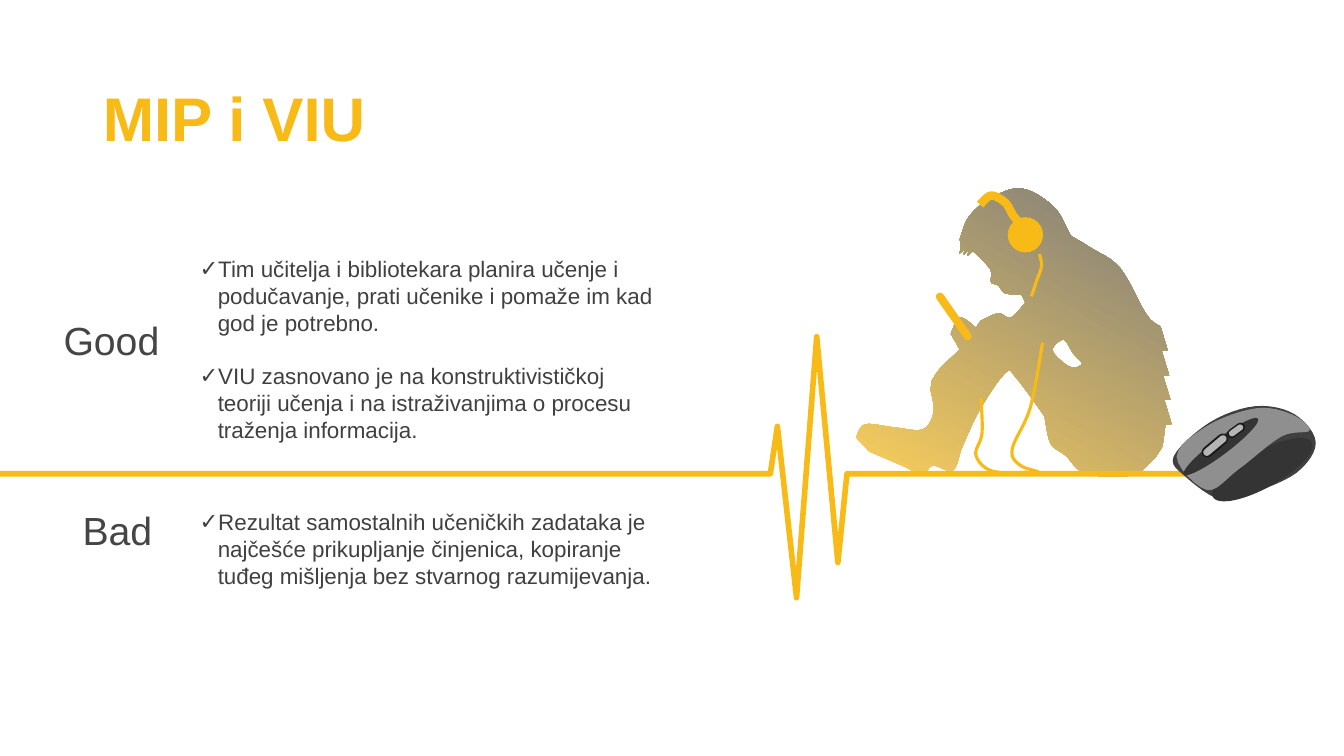
from dataclasses import dataclass
from math import hypot

from lxml.etree import SubElement
from pptx import Presentation
from pptx.dml.color import RGBColor
from pptx.enum.shapes import MSO_SHAPE
from pptx.enum.text import MSO_ANCHOR, MSO_AUTO_SIZE, PP_ALIGN
from pptx.oxml.ns import qn
from pptx.util import Pt

PX = 9144


@dataclass(frozen=True)
class Theme:
    """Colours, font, type sizes and line widths of the slide."""
    accent: str = "F8BA16"
    label: str = "454545"
    body: str = "404040"
    shell: str = "404040"
    side: str = "343434"
    top: str = "8F8F8F"
    slot: str = "1A1A1A"
    wheel: str = "B5B5B5"
    font: str = "Arial"
    title_size: int = 44
    label_size: int = 28
    body_size: int = 16
    pulse_width: float = 4
    cord_width: float = 2.25
    band_width: float = 6


THEME = Theme()


def paint(shape, fill=None, line=None, width=1):
    """Give a shape a plain fill, a plain line, or neither, and no shadow."""
    shape.shadow.inherit = False
    if fill:
        shape.fill.solid()
        shape.fill.fore_color.rgb = RGBColor.from_string(fill)
    else:
        shape.fill.background()
    if line:
        shape.line.color.rgb = RGBColor.from_string(line)
        shape.line.width = Pt(width)
    else:
        shape.line.fill.background()


def smooth(points, closed=False, steps=6):
    """Return a Catmull-Rom curve through a few anchor points."""
    if closed:
        padded = [points[-1], *points, *points[:2]]
    else:
        padded = [points[0], *points, points[-1]]

    def blend(a, b, c, d, t):
        return (2 * b + (c - a) * t + (2 * a - 5 * b + 4 * c - d) * t ** 2
                + (3 * b - a - 3 * c + d) * t ** 3) / 2

    curve = [tuple(blend(*axis, step / steps) for axis in zip(*padded[i:i + 4]))
             for i in range(len(padded) - 3) for step in range(steps)]
    return curve + [padded[-2]]


def hair_tips(start, end, count, depth):
    """Return a row of pointed locks from start to end, standing out by depth."""
    run, rise = end[0] - start[0], end[1] - start[1]
    length = hypot(run, rise)
    tips = [start]
    for lock in range(1, count + 1):
        along = lock / count
        x, y = start[0] + run * along, start[1] + rise * along
        tips += [(x + rise / length * depth, y - run / length * depth), (x, y)]
    return tips


def draw_outline(slide, box, *contours, closed=True, **style):
    """Draw contours, given in px from the corner of a box, as one outline."""
    placed = [[((box[0] + x) * PX, (box[1] + y) * PX) for x, y in contour] for contour in contours]
    builder = slide.shapes.build_freeform(*placed[0][0])
    for number, (first, *others) in enumerate(placed):
        if number:
            builder.move_to(*first)
        builder.add_line_segments(others, close=closed)
    outline = builder.convert_to_shape()
    paint(outline, **style)
    return outline


def draw_tilted(slide, box, kind, center, size, angle, **style):
    """Draw a preset shape around a center in a box, turned by an angle."""
    (x, y), (width, height) = center, size
    left, top = box[0] + x - width / 2, box[1] + y - height / 2
    shape = slide.shapes.add_shape(kind, *(round(n * PX) for n in (left, top, width, height)))
    shape.rotation = angle
    if kind == MSO_SHAPE.ROUNDED_RECTANGLE:
        shape.adjustments[0] = 0.5
    paint(shape, **style)


def write_text(holder, box, paragraphs, *, size, color, bold=False, align=PP_ALIGN.LEFT,
               anchor=MSO_ANCHOR.TOP, wrap=True, bullet=None, gap=0):
    """Move a placeholder to a box and fill it with formatted paragraphs."""
    holder.left, holder.top, holder.width, holder.height = (n * PX for n in box)
    frame = holder.text_frame
    frame.text = "\n".join(paragraphs)
    frame.word_wrap = wrap
    frame.auto_size = MSO_AUTO_SIZE.NONE
    frame.vertical_anchor = anchor
    for number, paragraph in enumerate(frame.paragraphs):
        paragraph.alignment = align
        paragraph.line_spacing = 1.0
        paragraph.space_before = Pt(gap if number else 0)
        paragraph.space_after = Pt(0)
        if bullet:
            properties = paragraph._p.get_or_add_pPr()
            properties.set("marL", str(18 * PX))
            properties.set("indent", str(-18 * PX))
            SubElement(properties, qn("a:buChar")).set("char", bullet)
        font = paragraph.runs[0].font
        font.name, font.size, font.bold = THEME.font, Pt(size), bold
        font.color.rgb = RGBColor.from_string(color)


def add_verdict(label, points, label_box, points_box, verdict, reasons):
    """Place a verdict label and its ticked reasons."""
    write_text(label, label_box, [verdict], size=THEME.label_size, color=THEME.label,
               align=PP_ALIGN.RIGHT, anchor=MSO_ANCHOR.MIDDLE)
    write_text(points, points_box, reasons, size=THEME.body_size, color=THEME.body,
               bullet="✓", gap=19)


def add_reader(slide, box):
    """Draw the seated reader as a faded silhouette, one body part after another."""
    foot = smooth([(0, 248), (9, 235), (38, 238), (66, 240), (77, 223), (74, 201)])
    shin = smooth([(75, 192), (84, 179), (103, 161)])
    hand = smooth([(94, 145), (103, 129), (119, 139)])
    knee = smooth([(124, 132), (141, 125), (154, 129), (168, 114)])
    face = smooth([(164, 106), (148, 105), (141, 97), (134, 94), (133, 81), (116, 63)])
    brow = hair_tips((116, 63), (104, 60), count=3, depth=6)
    head = smooth([(103, 51), (112, 29), (133, 11), (164, 1), (196, 19), (213, 48)])
    back = smooth([(213, 48), (233, 60), (262, 80), (288, 126), (302, 138)])
    long_hair = hair_tips((302, 138), (307, 235), count=4, depth=6)
    seat = smooth([(304, 257), (293, 272), (272, 286), (228, 284), (208, 266), (193, 254), (187, 227)])
    thigh = smooth([(187, 227), (159, 189), (148, 184), (122, 222), (104, 261)])
    heel = smooth([(104, 261), (96, 281), (76, 276), (66, 286), (50, 278), (13, 262)])
    body = foot + shin + hand + knee + face + brow + head + back + long_hair + seat + thigh + heel
    arm_gap = smooth([(195, 162), (206, 151), (215, 164), (224, 175), (212, 178)], closed=True)

    reader = draw_outline(slide, box, body, arm_gap)
    reader.fill.gradient()
    reader.fill.gradient_angle = 60
    for position, (stop, color) in enumerate(zip(reader.fill.gradient_stops, (THEME.accent, THEME.label))):
        stop.color.rgb = RGBColor.from_string(color)
        stop.position = position
    for tint in reader._element.spPr.iter(qn("a:srgbClr")):
        SubElement(tint, qn("a:alpha")).set("val", "70000")


def add_gadgets(slide, box):
    """Draw the headphones, their cords and the phone over the reader's box."""
    headband = [(123, 17), (134, 8), (148, 15), (156, 28), (164, 37)]
    ear_cord = [(182, 66), (184, 78), (179, 93), (174, 108)]
    front_cord = [(185, 154), (173, 218), (155, 259), (162, 275), (181, 282)]
    rear_cord = [(124, 209), (125, 244), (119, 266), (137, 282), (181, 282)]
    for strand in (headband, ear_cord, front_cord, rear_cord):
        width = THEME.band_width if strand is headband else THEME.cord_width
        draw_outline(slide, box, smooth(strand), closed=False, line=THEME.accent, width=width)
    draw_tilted(slide, box, MSO_SHAPE.OVAL, (168, 47), (35, 35), 0, fill=THEME.accent)
    draw_tilted(slide, box, MSO_SHAPE.ROUNDED_RECTANGLE, (97, 128), (56, 8), 55, fill=THEME.accent)


def add_pulse(slide, box):
    """Draw the level line with a heartbeat between its two flat runs."""
    level = 136
    beats = [(772, 89), (791, 259), (811, 0), (832, 224)]
    pulse = [(0, level), (765, level), *beats, (841, level), (box[2], level)]
    draw_outline(slide, box, pulse, closed=False, line=THEME.accent, width=THEME.pulse_width)


def add_mouse(slide, box):
    """Draw the computer mouse as layers from the shell up to the wheel."""
    pill, oval = MSO_SHAPE.ROUNDED_RECTANGLE, MSO_SHAPE.OVAL
    shell = [(0, 50), (36, 16), (81, 0), (120, 8), (141, 36), (122, 66), (76, 87), (47, 93), (13, 71)]
    top = [(3, 50), (34, 19), (82, 2), (117, 8), (135, 24), (107, 30), (64, 63), (33, 83)]
    draw_outline(slide, box, smooth(shell, closed=True), fill=THEME.shell)
    draw_tilted(slide, box, oval, (88, 63), (112, 36), -29, fill=THEME.side)
    draw_outline(slide, box, smooth(top, closed=True), fill=THEME.top)
    for kind, center, size, angle, color in [
            (oval, (47, 40), (92, 16), -37, THEME.side),
            (pill, (41, 39), (31, 11), -40, THEME.slot),
            (pill, (41, 39), (28, 7), -40, THEME.wheel),
            (pill, (62, 24), (20, 9), -36, THEME.slot),
            (pill, (62, 24), (16, 6), -36, THEME.wheel)]:
        draw_tilted(slide, box, kind, center, size, angle, fill=color)


def main():
    """Build the slide and save it."""
    deck = Presentation()
    deck.slide_width, deck.slide_height = 1333 * PX, 750 * PX
    slide = deck.slides.add_slide(deck.slide_layouts[4])
    title, good, good_points, bad, bad_points = slide.placeholders
    write_text(title, (92, 74, 283, 84), ["MIP i VIU"], size=THEME.title_size,
               color=THEME.accent, bold=True, wrap=False)
    add_verdict(good, good_points, (50, 309, 118, 57), (188, 248, 479, 219), "Good", [
        "Tim učitelja i bibliotekara planira učenje i podučavanje, prati učenike i pomaže im kad "
        "god je potrebno.",
        "VIU zasnovano je na konstruktivističkoj teoriji učenja i na istraživanjima o procesu "
        "traženja informacija."])
    add_verdict(bad, bad_points, (58, 497, 103, 57), (188, 499, 479, 111), "Bad", [
        "Rezultat samostalnih učeničkih zadataka je najčešće prikupljanje činjenica, kopiranje "
        "tuđeg mišljenja bez stvarnog razumijevanja."])
    reader_box = (849, 186, 313, 287)
    add_reader(slide, reader_box)
    add_gadgets(slide, reader_box)
    add_pulse(slide, (-1, 334, 1199, 259))
    add_mouse(slide, (1164, 403, 141, 94))
    deck.save("out.pptx")


if __name__ == "__main__":
    main()
